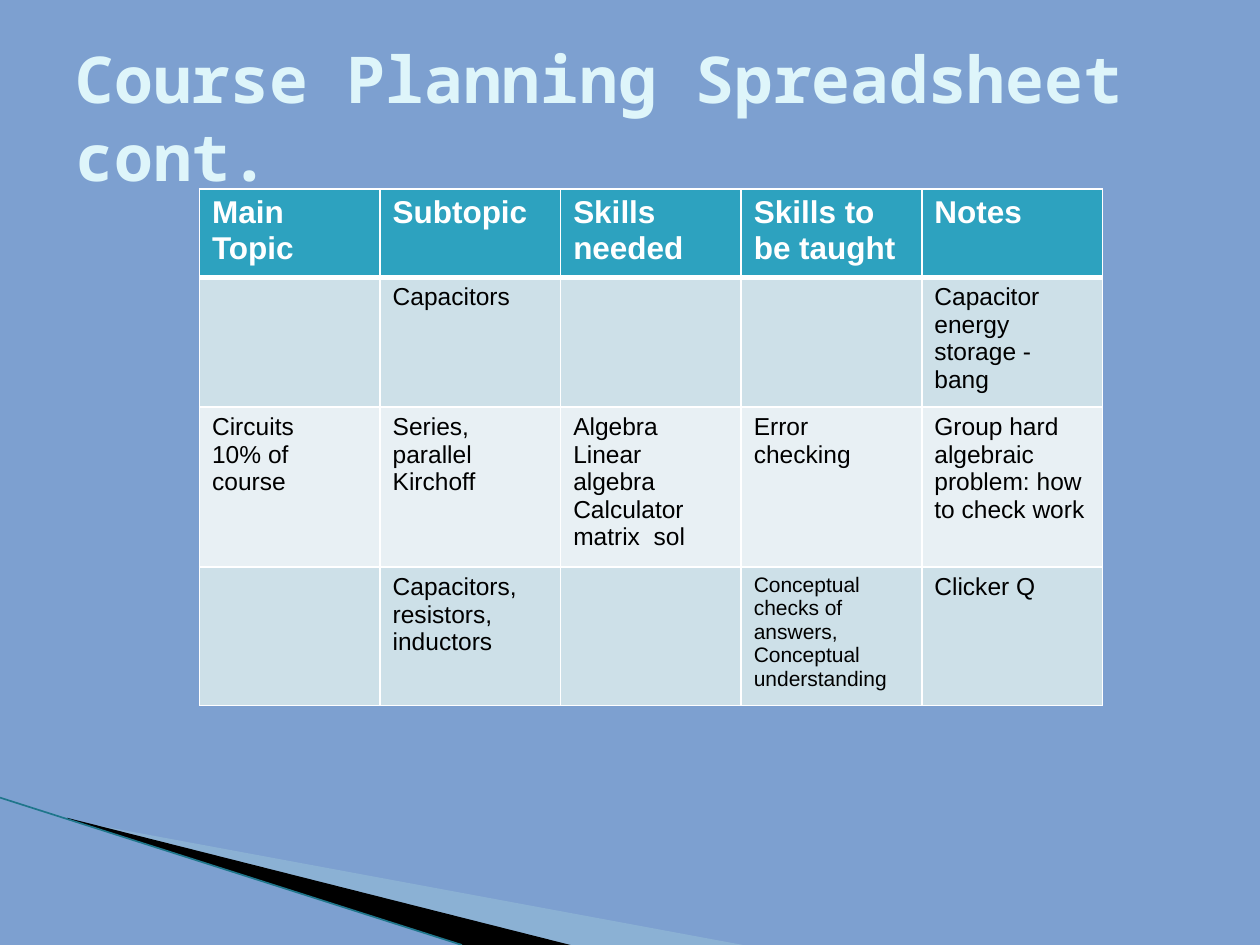
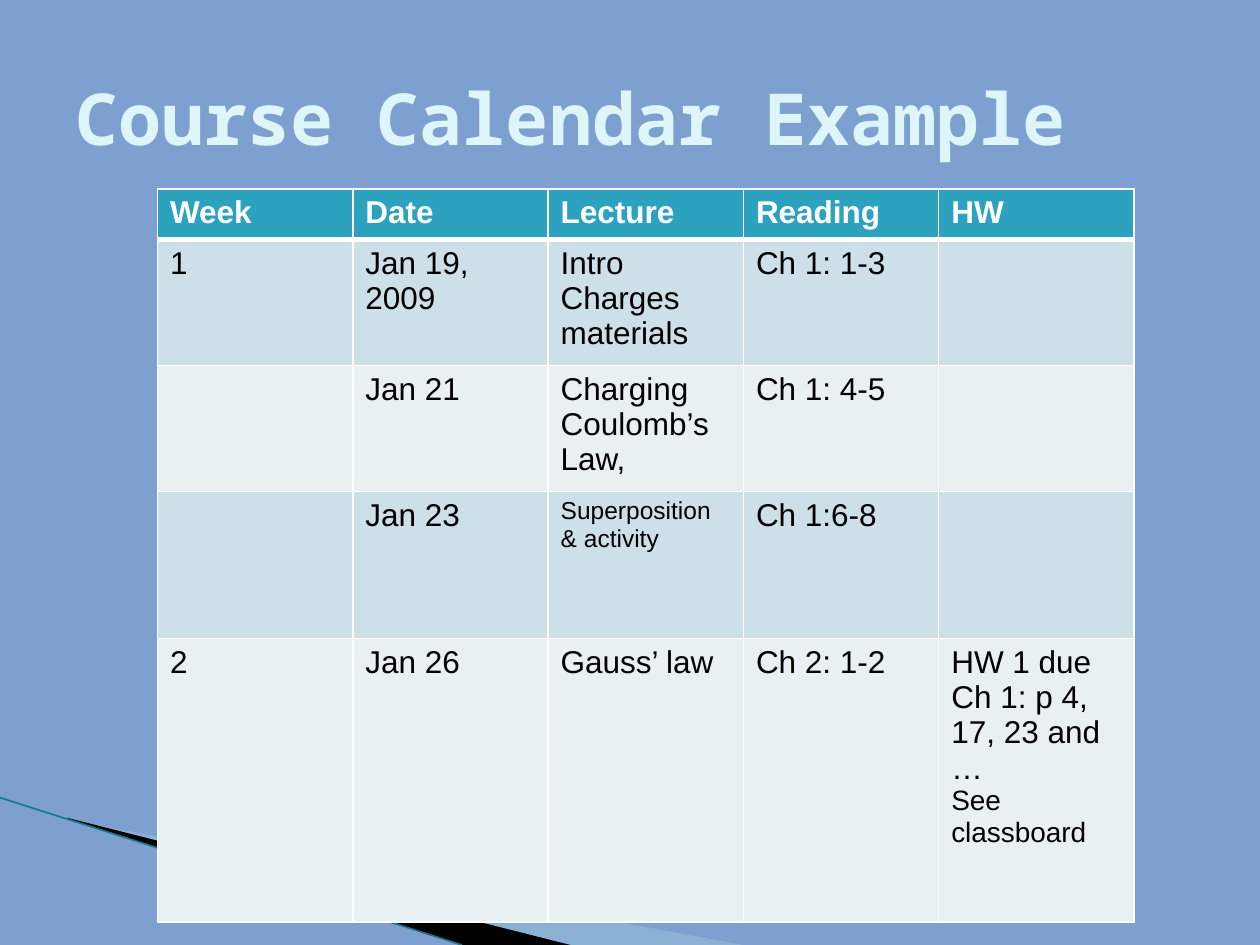
"""Build two course planning slides with a shared title, corner wedge and table style."""
from lxml import etree
from pptx import Presentation
from pptx.dml.color import RGBColor
from pptx.enum import shapes, text as txt
from pptx.oxml import ns
from pptx.util import Pt

BLUE = RGBColor(0x7D, 0xA0, 0xD0)
PALE = RGBColor(0xA0, 0xCB, 0xDC)
BLACK = RGBColor(0x00, 0x00, 0x00)
WHITE = RGBColor(0xFF, 0xFF, 0xFF)
TEAL = RGBColor(0x1F, 0x76, 0x8B)
ICE = RGBColor(0xDE, 0xF5, 0xFA)
HEADER = RGBColor(0x2D, 0xA2, 0xBF)
BANDS = (RGBColor(0xCD, 0xE0, 0xE8), RGBColor(0xE8, 0xF0, 0xF4))
TITLE_FONT, BODY_FONT = "Noto Sans Mono", "Arial"

PLANNING = [
    ["Main Topic", "Subtopic", "Skills needed", "Skills to be taught", "Notes"],
    ["", "Capacitors", "", "", "Capacitor energy storage - bang"],
    ["Circuits\n10% of course", "Series, parallel\nKirchoff",
     "Algebra\nLinear algebra\nCalculator matrix  sol", "Error checking",
     "Group hard algebraic problem: how to check work"],
    ["", "Capacitors, resistors, inductors", "",
     "Conceptual checks of answers,\nConceptual understanding", "Clicker Q"],
]
PLANNING_SIZES = {"Conceptual checks of answers,": 12, "Conceptual understanding": 12}

CALENDAR = [
    ["Week", "Date", "Lecture", "Reading", "HW"],
    ["1", "Jan 19, 2009", "Intro\nCharges\nmaterials", "Ch 1: 1-3", ""],
    ["", "Jan 21", "Charging\nCoulomb’s Law,", "Ch 1: 4-5", ""],
    ["", "Jan 23", "Superposition & activity", "Ch 1:6-8", ""],
    ["2", "Jan 26", "Gauss’ law", "Ch 2: 1-2",
     "HW 1 due\nCh 1: p 4, 17, 23 and …\nSee classboard"],
]
CALENDAR_SIZES = {"Superposition & activity": 14, "See classboard": 16}


def write(tf, text, size, font=BODY_FONT, color=BLACK, bold=False, sizes=None):
    """Write one paragraph per line; sizes overrides the size of given lines."""
    for i, line in enumerate(text.split("\n")):
        p = tf.add_paragraph() if i else tf.paragraphs[0]
        p.alignment = txt.PP_ALIGN.LEFT
        r = p.add_run()
        r.text = line
        r.font.name, r.font.bold = font, bold
        r.font.size = Pt((sizes or {}).get(line, size))
        r.font.color.rgb = color


def add_wedge(s, points, color, alpha=None):
    """Draw a filled outline through the points, with optional opacity in percent."""
    start, *rest = [(Pt(x), Pt(y)) for x, y in points]
    builder = s.shapes.build_freeform(*start, scale=1.0)
    builder.add_line_segments(rest, close=True)
    sp = builder.convert_to_shape()
    sp.shadow.inherit = False
    sp.line.fill.background()
    sp.fill.solid()
    sp.fill.fore_color.rgb = color
    if alpha:
        clr = sp._element.spPr.find(".//" + ns.qn("a:srgbClr"))
        etree.SubElement(clr, ns.qn("a:alpha"), val=str(alpha * 1000))


def add_corner(s):
    """Draw the wedges and the thin line in the lower left corner."""
    add_wedge(s, [(39.6, 468.7), (424.6, 540), (325.6, 540), (39.6, 468)], PALE, 40)
    add_wedge(s, [(38.2, 467.3), (326, 540), (264, 540), (38.9, 468)], BLACK)
    line = s.shapes.add_connector(shapes.MSO_CONNECTOR.STRAIGHT, 0, Pt(455.8), Pt(264), Pt(540))
    line.line.color.rgb = TEAL
    line.line.width = Pt(0.95)
    etree.SubElement(line._element.spPr, ns.qn("a:effectLst"))


def add_borders(cell, top, bottom):
    """Give a cell white borders, 1 pt wide at the sides."""
    tcPr = cell._tc.get_or_add_tcPr()
    for i, (side, width) in enumerate(zip("LRTB", (1, 1, top, bottom))):
        ln = etree.Element(ns.qn("a:ln" + side), w=str(Pt(width)))
        fill = etree.SubElement(ln, ns.qn("a:solidFill"))
        etree.SubElement(fill, ns.qn("a:srgbClr"), val=str(WHITE))
        tcPr.insert(i, ln)


def add_grid(s, rows, left, col_width, heights, size, sizes):
    """Add a table with a header row, banded body rows and equal columns."""
    cols = len(rows[0])
    table = s.shapes.add_table(len(rows), cols, Pt(left), Pt(108),
                               Pt(col_width * cols), Pt(sum(heights))).table
    table.first_row = table.horz_banding = False
    for col in table.columns:
        col.width = Pt(col_width)
    for i, (row, height) in enumerate(zip(rows, heights)):
        table.rows[i].height = Pt(height)
        for j, text in enumerate(row):
            cell = table.cell(i, j)
            cell.fill.solid()
            cell.fill.fore_color.rgb = BANDS[(i - 1) % 2] if i else HEADER
            add_borders(cell, 3 if i == 1 else 1, 1 if i else 3)
            if not i:
                write(cell.text_frame, text, 18, color=WHITE, bold=True)
            elif text:
                write(cell.text_frame, text, size, sizes=sizes)


def add_slide(prs, title, title_size):
    """Add a title-only slide with the corner drawing and a formatted title."""
    s = prs.slides.add_slide(prs.slide_layouts[5])
    add_corner(s)
    sp = s.shapes.title
    sp.left, sp.top, sp.width, sp.height = Pt(36), Pt(21.6), Pt(648), Pt(90)
    tf = sp.text_frame
    tf.word_wrap = True
    tf.auto_size = txt.MSO_AUTO_SIZE.NONE
    tf.vertical_anchor = txt.MSO_ANCHOR.MIDDLE
    write(tf, title, title_size, font=TITLE_FONT, color=ICE, bold=True)
    return s


def main():
    """Build both slides and save the file."""
    prs = Presentation()
    prs.slide_width, prs.slide_height = Pt(720), Pt(540)
    fill = prs.slide_master.background.fill
    fill.solid()
    fill.fore_color.rgb = BLUE

    s = add_slide(prs, "Course Planning Spreadsheet cont.", 36.9)
    add_grid(s, PLANNING, 114, 103.2, [50.4, 74.2, 91.4, 79.2], 14, PLANNING_SIZES)

    s = add_slide(prs, "Course Calendar Example", 41)
    add_grid(s, CALENDAR, 90, 111.6, [28.8, 72, 72, 84, 162], 18, CALENDAR_SIZES)

    prs.save("out.pptx")


if __name__ == "__main__":
    main()
